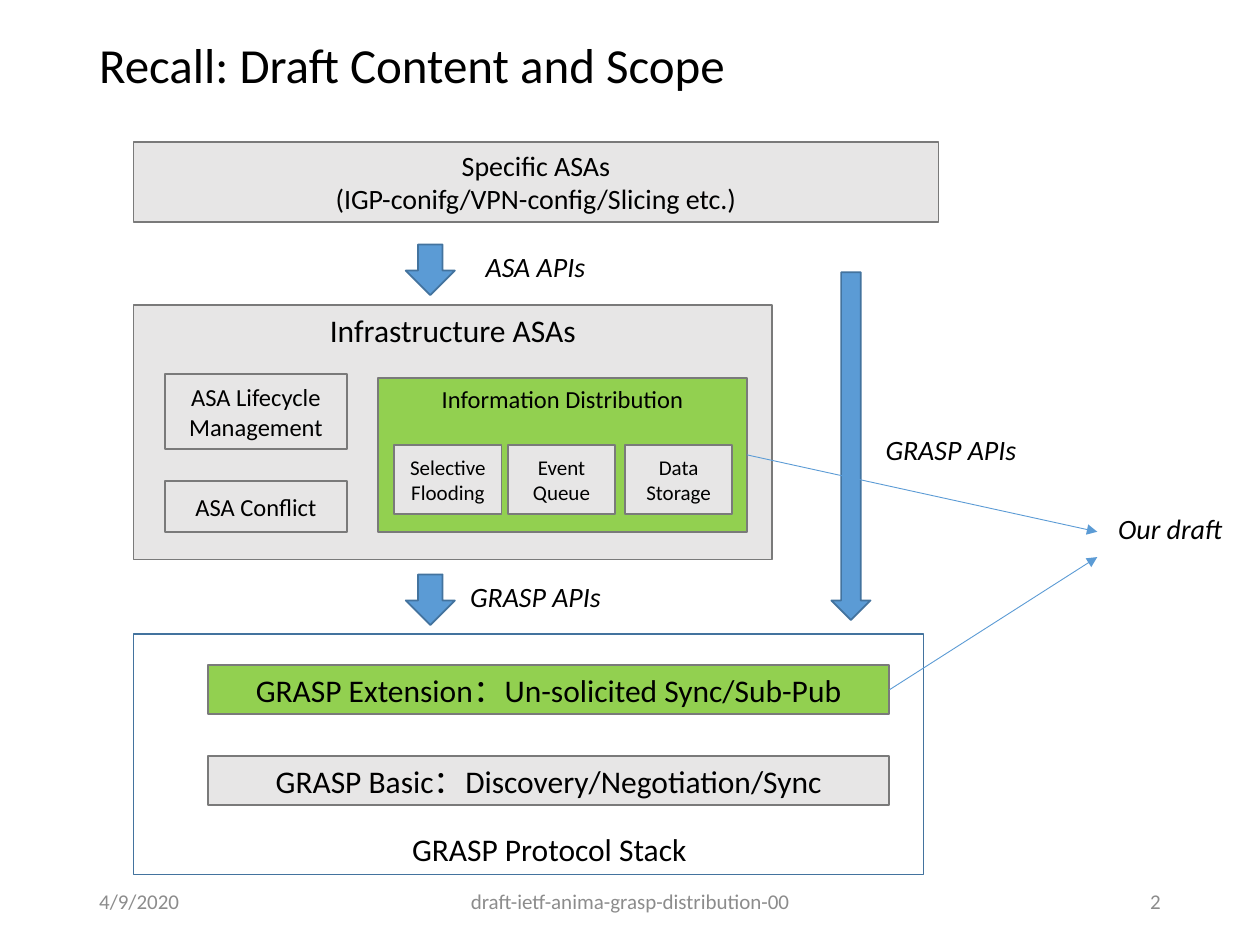
import pptx
import pptx.dml.color
import pptx.enum.shapes
import pptx.enum.text
import pptx.oxml
import pptx.oxml.ns
import pptx.util
from pptx.util import Cm

RGBColor = pptx.dml.color.RGBColor
BLACK = RGBColor(0x00, 0x00, 0x00)
GRAY = RGBColor(0xE7, 0xE6, 0xE6)
GREEN = RGBColor(0x92, 0xD0, 0x50)
BLUE = RGBColor(0x5B, 0x9B, 0xD5)
BOX_EDGE = RGBColor(0x7A, 0x7A, 0x7A)
BLUE_EDGE = RGBColor(0x43, 0x73, 0x9E)
FOOTER_GRAY = RGBColor(0x8C, 0x8C, 0x8C)

SHAPE = pptx.enum.shapes.MSO_SHAPE
ALIGN = pptx.enum.text.PP_ALIGN
ANCHOR = pptx.enum.text.MSO_ANCHOR
RIGHT_SIDE = 3


def set_format(target, values):
    for name, value in values.items():
        setattr(target, name, value)


def write_text(shape, text, size, color=BLACK, italic=None,
               alignment=ALIGN.CENTER, anchor=ANCHOR.MIDDLE, line_spacing=None):
    """Fill the shape with text, one paragraph a line."""
    frame = shape.text_frame
    set_format(frame, {"text": text, "word_wrap": True, "vertical_anchor": anchor})
    for paragraph in frame.paragraphs:
        set_format(paragraph, {"alignment": alignment, "line_spacing": line_spacing})
        for run in paragraph.runs:
            set_format(run.font, {"name": "Calibri", "size": pptx.util.Pt(size),
                                  "italic": italic})
            run.font.color.rgb = color


def add_shape(slide, kind, box, fill, edge):
    shape = slide.shapes.add_shape(kind, *map(Cm, box))
    shape.shadow.inherit = False
    if fill is None:
        shape.fill.background()
    else:
        shape.fill.solid()
        shape.fill.fore_color.rgb = fill
    shape.line.color.rgb = edge
    shape.line.width = pptx.util.Pt(1)
    return shape


def add_block(slide, box, text, size, fill=GRAY, anchor=ANCHOR.MIDDLE):
    shape = add_shape(slide, SHAPE.RECTANGLE, box, fill, BOX_EDGE)
    write_text(shape, text, size, anchor=anchor)
    return shape


def add_down_arrow(slide, box):
    add_shape(slide, SHAPE.DOWN_ARROW, box, BLUE, BLUE_EDGE)


def add_label(slide, box, text, size, **text_format):
    write_text(slide.shapes.add_textbox(*map(Cm, box)), text, size, **text_format)


def add_pointer(slide, source, end_x, end_y):
    """Draw a thin arrow from the right side of the source block."""
    connector = slide.shapes.add_connector(
        pptx.enum.shapes.MSO_CONNECTOR.STRAIGHT, 0, 0, Cm(end_x), Cm(end_y))
    connector.begin_connect(source, RIGHT_SIDE)
    connector.line.color.rgb = BLUE
    connector.line.width = pptx.util.Pt(0.5)
    line = connector.line._get_or_add_ln()
    tail = pptx.oxml.parse_xml(
        f'<a:tailEnd {pptx.oxml.ns.nsdecls("a")} type="triangle"/>')
    line.append(tail)
    effects = pptx.oxml.parse_xml(f'<a:effectLst {pptx.oxml.ns.nsdecls("a")}/>')
    line.addnext(effects)


def add_grasp_stack(slide):
    """Draw the protocol stack and return its extension block."""
    add_shape(slide, SHAPE.RECTANGLE, (2.69, 12.78, 15.93, 4.85), None, BLUE_EDGE)
    add_block(slide, (4.19, 15.24, 13.74, 0.99),
              "GRASP Basic：Discovery/Negotiation/Sync", 18)
    extension = add_block(slide, (4.19, 13.41, 13.74, 0.99),
                          "GRASP Extension：Un-solicited Sync/Sub-Pub", 18, GREEN)
    add_label(slide, (6.3, 16.61, 9.55, 1.02), "GRASP Protocol Stack", 18,
              anchor=ANCHOR.TOP)
    return extension


def add_infrastructure(slide):
    """Draw the infrastructure ASAs and return the distribution block."""
    add_block(slide, (2.69, 6.15, 12.88, 5.13), "Infrastructure ASAs", 18,
              anchor=ANCHOR.TOP)
    add_block(slide, (3.33, 7.54, 3.66, 1.52), "ASA Lifecycle Management", 14)
    add_block(slide, (3.33, 9.7, 3.66, 1.02), "ASA Conflict", 14)
    distribution = add_block(slide, (7.62, 7.62, 7.44, 3.1),
                             "Information Distribution", 14, GREEN, ANCHOR.TOP)
    for left, text in ((7.95, "Selective Flooding"), (10.24, "Event\nQueue"),
                       (12.6, "Data\nStorage")):
        add_block(slide, (left, 8.97, 2.16, 1.4), text, 12)
    return distribution


def add_footer(slide):
    for left, width, text, alignment in (
            (1.75, 5.72, "4/9/2020", ALIGN.LEFT),
            (8.41, 8.59, "draft-ietf-anima-grasp-distribution-00", ALIGN.CENTER),
            (17.93, 5.72, "2", ALIGN.RIGHT)):
        add_label(slide, (left, 17.65, width, 1.02), text, 12,
                  color=FOOTER_GRAY, alignment=alignment)


def main():
    presentation = pptx.Presentation()
    set_format(presentation, {"slide_width": Cm(25.4), "slide_height": Cm(19.05)})
    slide = presentation.slides.add_slide(presentation.slide_layouts[6])

    add_label(slide, (1.75, 0.66, 21.89, 1.4), "Recall: Draft Content and Scope",
              28, alignment=ALIGN.LEFT, line_spacing=0.9)
    add_block(slide, (2.69, 2.87, 16.23, 1.6),
              "Specific ASAs\n(IGP-conifg/VPN-config/Slicing etc.)", 16)
    distribution = add_infrastructure(slide)
    extension = add_grasp_stack(slide)

    for box in ((8.18, 4.93, 0.99, 1.02), (8.18, 11.58, 0.99, 1.02),
                (16.76, 5.49, 0.79, 7.01)):
        add_down_arrow(slide, box)
    add_pointer(slide, distribution, 22.12, 10.72)
    add_pointer(slide, extension, 22.12, 11.23)

    for left, top, width, text in ((8.66, 4.9, 4.27, "ASA APIs"),
                                   (8.66, 11.56, 4.27, "GRASP APIs"),
                                   (17.58, 8.59, 3.18, "GRASP APIs"),
                                   (22, 10.19, 3.18, "Our draft")):
        add_label(slide, (left, top, width, 0.94), text, 16, italic=True,
                  anchor=ANCHOR.TOP)
    add_footer(slide)
    presentation.save("out.pptx")


if __name__ == "__main__":
    main()
